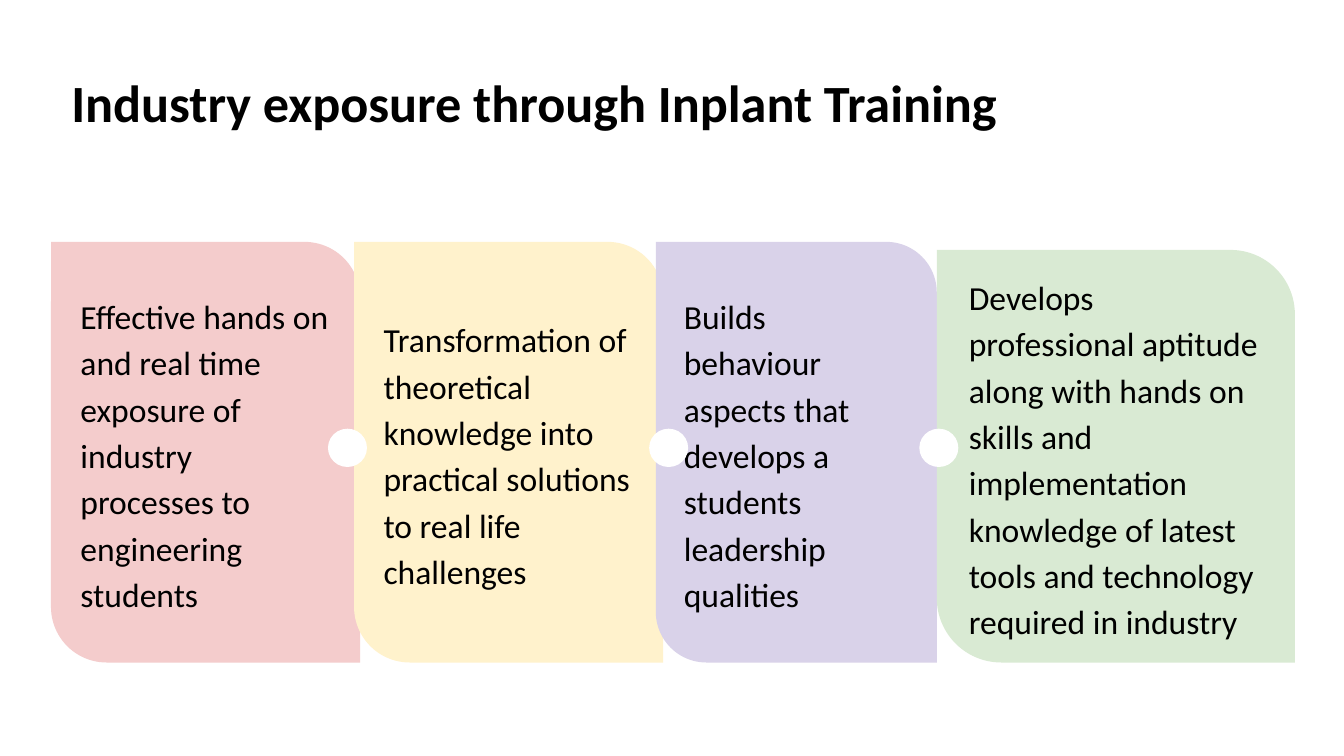
from dataclasses import dataclass

from pptx import Presentation
from pptx.dml.color import RGBColor
from pptx.enum.shapes import MSO_SHAPE
from pptx.enum.text import MSO_ANCHOR, PP_ALIGN
from pptx.util import Pt

PX = 4572  # EMU per px, 200 px to the inch


@dataclass(frozen=True)
class Theme:
    font: str = "Calibri"
    ink: str = "000000"
    paper: str = "FFFFFF"
    red: str = "F4CCCC"
    yellow: str = "FFF2CC"
    purple: str = "D9D2E9"
    green: str = "D9EAD3"
    title_size: int = 28
    body_size: int = 18
    line_spacing: float = 1.15


T = Theme()

# Box (left, top, width, height), fill and wording of each card
CARDS = [
    ((76, 360, 460, 626), T.red,
     "Effective hands on and real time exposure of industry processes to "
     "engineering students"),
    ((527, 360, 460, 626), T.yellow,
     "Transformation of theoretical knowledge into practical solutions to "
     "real life challenges"),
    ((976, 360, 418, 626), T.purple,
     "Builds behaviour aspects that develops a students leadership qualities"),
    ((1394, 372, 533, 614), T.green,
     "Develops professional aptitude along with hands on skills and "
     "implementation knowledge of latest tools and technology required in "
     "industry"),
]
DOT_LEFTS = [488, 966, 1368]


def emu(box):
    return [v * PX for v in box]


def write(tf, text, size, bold=False, space=0, left_inset=20):
    tf.word_wrap = True
    tf.margin_left = left_inset * PX
    tf.margin_top = tf.margin_right = tf.margin_bottom = 20 * PX
    p = tf.paragraphs[0]
    p.alignment = PP_ALIGN.LEFT
    p.line_spacing = T.line_spacing
    p.space_before = p.space_after = Pt(space)
    r = p.add_run()
    r.text = text
    r.font.name = T.font
    r.font.size = Pt(size)
    r.font.bold = bold
    r.font.color.rgb = RGBColor.from_string(T.ink)


def add_filled(s, kind, box, fill):
    sp = s.shapes.add_shape(kind, *emu(box))
    sp.shadow.inherit = False
    sp.fill.solid()
    sp.fill.fore_color.rgb = RGBColor.from_string(fill)
    sp.line.fill.background()
    return sp


def add_title(s, box, text):
    tf = s.shapes.add_textbox(*emu(box)).text_frame
    tf.vertical_anchor = MSO_ANCHOR.TOP
    write(tf, text, T.title_size, bold=True, left_inset=38)


def add_card(s, box, fill, text):
    sp = add_filled(s, MSO_SHAPE.ROUND_2_DIAG_RECTANGLE, box, fill)
    sp.adjustments[0] = 0
    sp.adjustments[1] = 0.18
    tf = sp.text_frame
    tf.vertical_anchor = MSO_ANCHOR.MIDDLE
    write(tf, text, T.body_size, space=3)


def add_dots(s, lefts, top, width, height):
    for left in lefts:
        add_filled(s, MSO_SHAPE.OVAL, (left, top, width, height), T.paper)


def main():
    prs = Presentation()
    prs.slide_width, prs.slide_height = emu((2000, 1125))
    s = prs.slides.add_slide(prs.slide_layouts[6])

    # Heading
    add_title(s, (68, 70, 1864, 124), "Industry exposure through Inplant Training")

    # Cards, each laid over the edge of the one to its left
    for box, fill, text in CARDS:
        add_card(s, box, fill, text)

    # Dots over the seams between cards
    add_dots(s, DOT_LEFTS, 638, 58, 57)

    prs.save("out.pptx")


if __name__ == "__main__":
    main()
